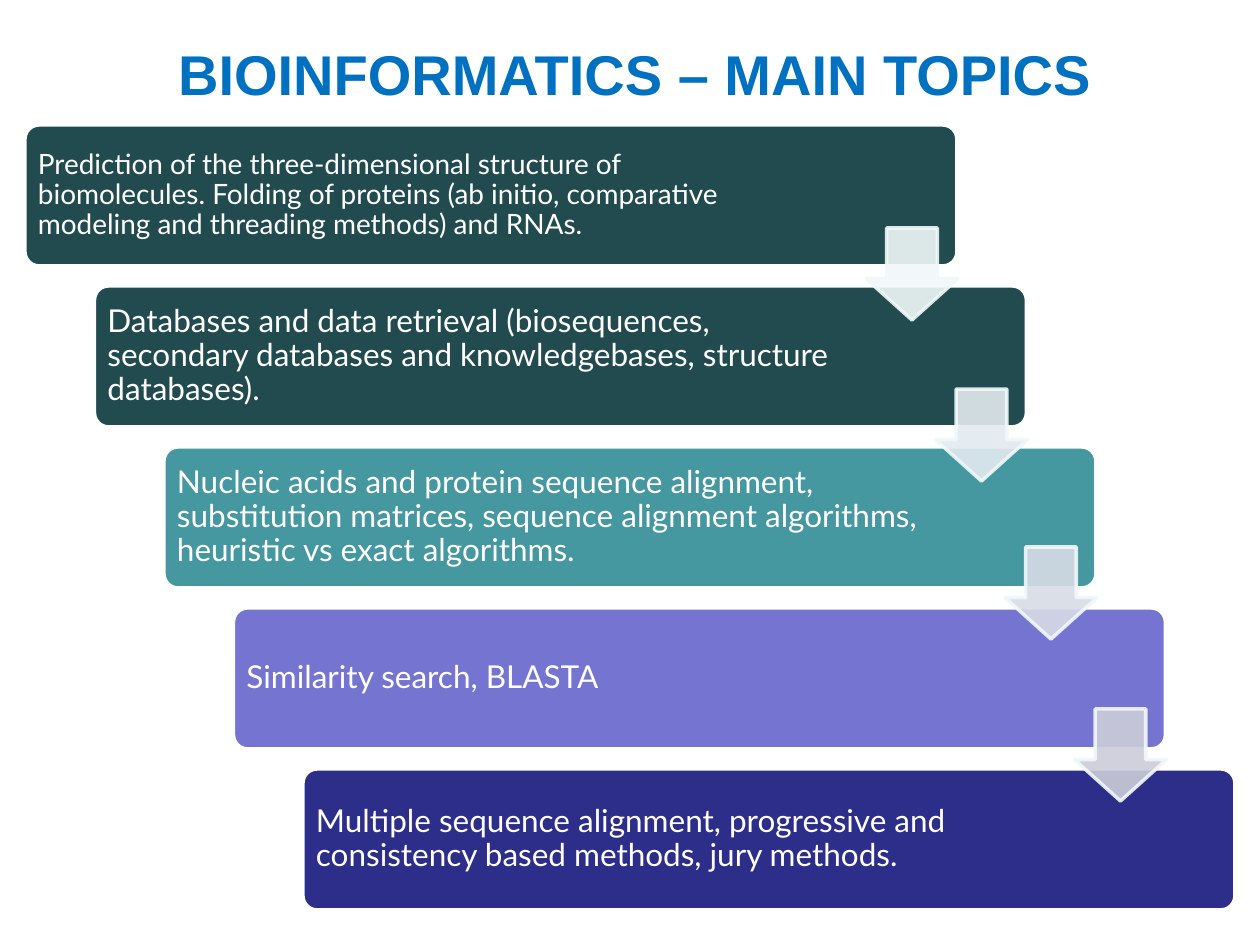
import pptx
import pptx.util
import pptx.dml.color
import pptx.enum.shapes
import pptx.enum.text
import lxml.etree

PX = 914400 // 126
HEX = {"title": "0070C0", "white": "FFFFFF", "edge": "F1F8F9",
       "dark": "224B50", "teal": "4597A0", "lilac": "7575D1", "navy": "2D2D8A"}
TITLE = "BIOINFORMATICS – MAIN TOPICS"
# Wording, size in points, box colour
TOPICS = [
    ("Prediction of the three-dimensional structure of biomolecules. Folding of "
     "proteins (ab initio, comparative modeling and threading methods) and RNAs.",
     16, "dark"),
    ("Databases and data retrieval (biosequences, secondary databases and "
     "knowledgebases, structure databases).", 18, "dark"),
    ("Nucleic acids and protein sequence alignment, substitution matrices, "
     "sequence alignment algorithms, heuristic vs exact algorithms.", 18, "teal"),
    ("Similarity search, BLASTA", 18, "lilac"),
    ("Multiple sequence alignment, progressive and consistency based methods, "
     "jury methods.", 18, "navy"),
]
# Top in px, fill
ARROWS = [(228, "F1F8F9"), (389, "E3EBF0"), (547, "D7DCE6"), (709, "CDCDDA")]

LEFT, TOP, WIDE, HIGH = 25, 125, 932, 141
STEP_X, STEP_Y = 69.5, 161
PAD, TEXT_W, INSET = 4, 763, 9
ARROW_X, ARROW = 866, 92

KIND = pptx.enum.shapes.MSO_SHAPE
ALIGN = pptx.enum.text.PP_ALIGN
MID = pptx.enum.text.MSO_ANCHOR.MIDDLE


def rgb(code):
    return pptx.dml.color.RGBColor.from_string(code)


def emu(*vals):
    return [round(v * PX) for v in vals]


def put(obj, vals):
    for key, val in vals.items():
        setattr(obj, key, val)


def draw(kind, at, fill, edge, adj):
    shape = slide.shapes.add_shape(kind, *emu(*at))
    shape.shadow.inherit = False
    shape.fill.solid()
    shape.fill.fore_color.rgb = rgb(fill)
    shape.line.color.rgb = rgb(edge)
    shape.line.width = pptx.util.Pt(2)
    for n, val in enumerate(adj):
        shape.adjustments[n] = val
    return shape


def fade(shape, pct):
    tag = pptx.oxml.ns.qn
    for node in shape.element.spPr.iter(tag("a:srgbClr")):
        lxml.etree.SubElement(node, tag("a:alpha")).set("val", str(pct * 1000))


def write(at, text, frame, para, font, color):
    box = slide.shapes.add_textbox(*emu(*at)).text_frame
    put(box, {"word_wrap": True, **frame})
    line = box.paragraphs[0]
    put(line, para)
    run = line.add_run()
    run.text = text
    put(run.font, font)
    run.font.color.rgb = rgb(color)


deck = pptx.Presentation()
deck.slide_width, deck.slide_height = emu(1260, 945)
slide = deck.slides.add_slide(deck.slide_layouts[6])

# Staircase of topic boxes
inset = emu(INSET)[0]
sides = ("margin_left", "margin_top", "margin_right", "margin_bottom")
frame = {"vertical_anchor": MID, **dict.fromkeys(sides, inset)}
for i, (text, size, color) in enumerate(TOPICS):
    x, y = LEFT + i * STEP_X, TOP + i * STEP_Y
    draw(KIND.ROUNDED_RECTANGLE, (x, y, WIDE, HIGH), HEX[color], HEX["white"], [0.1])
    write((x + PAD, y + PAD, TEXT_W, HIGH - 2 * PAD), text, frame,
          {"line_spacing": 0.9, "alignment": ALIGN.LEFT},
          {"size": pptx.util.Pt(size), "name": "Lato"}, HEX["white"])

# Arrows between the steps
for i, (y, fill) in enumerate(ARROWS):
    at = (ARROW_X + i * STEP_X, y, ARROW, ARROW)
    fade(draw(KIND.DOWN_ARROW, at, fill, HEX["edge"], [0.55, 0.45]), 90)

# Title
write((5, 33, 1260, 102), TITLE, {}, {"alignment": ALIGN.CENTER},
      {"size": pptx.util.Pt(32), "name": "Arial", "bold": True}, HEX["title"])

deck.save("out.pptx")
